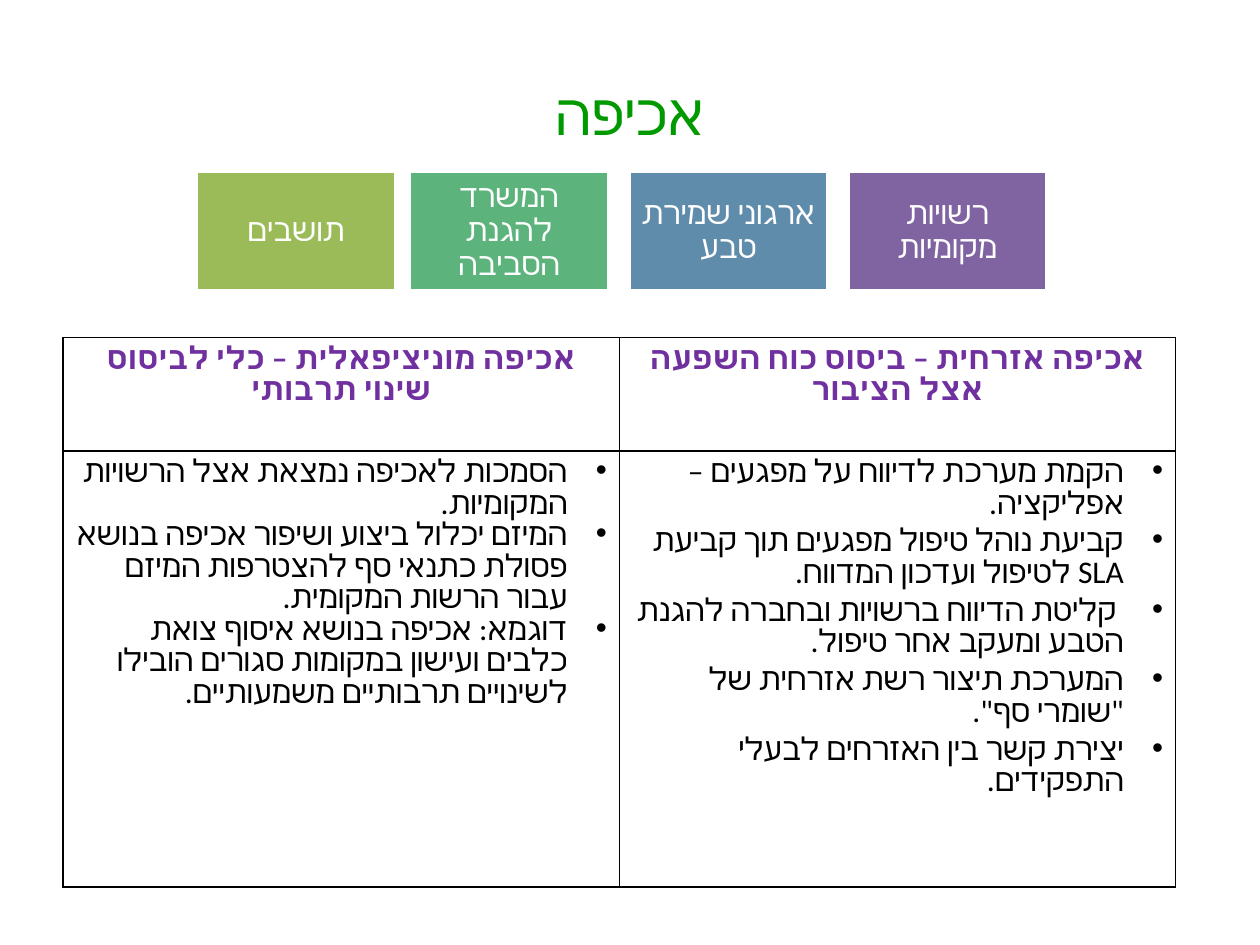
from lxml import etree
from pptx import Presentation
from pptx import util as u
from pptx.dml.color import RGBColor
from pptx.enum import shapes, text
from pptx.oxml import ns

FONT = "Calibri"
BODY_SIZE = 18
INDENT = u.Inches(0.31)
COLORS = {
    "title": "009900", "residents": "9BBB59", "ministry": "5CB37C",
    "nature": "608CAB", "councils": "8064A2", "heading": "7030A0",
    "ink": "000000", "paper": "FFFFFF",
}
PARTIES = [
    ("תושבים", "residents", 1.56),
    ("המשרד להגנת הסביבה", "ministry", 3.25),
    ("ארגוני שמירת טבע", "nature", 4.99),
    ("רשויות מקומיות", "councils", 6.73),
]
COLUMNS = [
    ("אכיפה מוניציפאלית – כלי לביסוס שינוי תרבותי", 0, [
        "הסמכות לאכיפה נמצאת אצל הרשויות המקומיות.",
        "המיזם יכלול ביצוע ושיפור אכיפה בנושא פסולת כתנאי סף להצטרפות המיזם עבור הרשות המקומית.",
        "דוגמא: אכיפה בנושא איסוף צואת כלבים ועישון במקומות סגורים הובילו לשינויים תרבותיים משמעותיים.",
    ]),
    ("אכיפה אזרחית – ביסוס כוח השפעה אצל הציבור", 3.6, [
        "הקמת מערכת לדיווח על מפגעים – אפליקציה.",
        "קביעת נוהל טיפול מפגעים תוך קביעת SLA לטיפול ועדכון המדווח.",
        " קליטת הדיווח ברשויות ובחברה להגנת הטבע ומעקב אחר טיפול.",
        "המערכת תיצור רשת אזרחית של \"שומרי סף\".",
        "יצירת קשר בין האזרחים לבעלי התפקידים.",
    ]),
]


def color(name):
    return RGBColor.from_string(COLORS[name])


def write_rtl(para, words, ink, size=BODY_SIZE, bold=False,
              align=text.PP_ALIGN.CENTER, spacing=None):
    """Fill a paragraph with right-to-left text, Hebrew font included."""
    para.text = words
    para.alignment = align
    para.line_spacing = spacing
    para._p.get_or_add_pPr().set("rtl", "1")
    for span in para.runs:
        span.font.name = FONT
        span.font.size = u.Pt(size)
        span.font.bold = bold
        span.font.color.rgb = color(ink)
        properties = span._r.get_or_add_rPr()
        etree.SubElement(properties, ns.qn("a:cs"), typeface=FONT)


def add_bullet(para):
    properties = para._p.get_or_add_pPr()
    properties.set("marL", str(INDENT))
    properties.set("indent", str(-INDENT))
    etree.SubElement(properties, ns.qn("a:buFont"), typeface="Arial")
    etree.SubElement(properties, ns.qn("a:buChar"), char="•")


def write_list(frame, items, gap):
    for index, item in enumerate(items):
        para = frame.add_paragraph() if index else frame.paragraphs[0]
        add_bullet(para)
        write_rtl(para, item, "ink", align=text.PP_ALIGN.RIGHT, spacing=0.82)
        if index:
            para.space_before = u.Pt(gap)


def frame_cell(cell):
    """Give a cell thin black borders and no fill."""
    properties = cell._tc.get_or_add_tcPr()
    for side in ("lnL", "lnR", "lnT", "lnB"):
        line = etree.SubElement(properties, ns.qn("a:" + side), w=str(u.Pt(1)))
        fill = etree.SubElement(line, ns.qn("a:solidFill"))
        etree.SubElement(fill, ns.qn("a:srgbClr"), val=COLORS["ink"])
    cell.fill.background()


def add_title(page, words):
    title = page.shapes.title
    title.left, title.top = u.Inches(0.5), u.Inches(0.27)
    title.width, title.height = u.Inches(9), u.Inches(1.25)
    title.text_frame.vertical_anchor = text.MSO_ANCHOR.MIDDLE
    write_rtl(title.text_frame.paragraphs[0], words, "title", size=33)


def add_party(page, words, fill, left):
    box = page.shapes.add_shape(
        shapes.MSO_SHAPE.RECTANGLE, u.Inches(left), u.Inches(1.36),
        u.Inches(1.58), u.Inches(0.95))
    box.shadow.inherit = False
    box.fill.solid()
    box.fill.fore_color.rgb = color(fill)
    box.line.color.rgb = color("paper")
    box.line.width = u.Pt(2)
    frame = box.text_frame
    frame.word_wrap = True
    frame.vertical_anchor = text.MSO_ANCHOR.MIDDLE
    frame.margin_left = frame.margin_right = u.Inches(0.07)
    frame.margin_top = frame.margin_bottom = u.Inches(0.07)
    write_rtl(frame.paragraphs[0], words, "paper", spacing=0.9)


def add_comparison(page):
    heights = (0.9, 3.46)
    table = page.shapes.add_table(
        2, len(COLUMNS), u.Inches(0.5), u.Inches(2.68),
        u.Inches(8.83), u.Inches(sum(heights))).table
    for row, height in zip(table.rows, heights):
        row.height = u.Inches(height)
    for column, (heading, gap, items) in enumerate(COLUMNS):
        head, body = table.cell(0, column), table.cell(1, column)
        frame_cell(head)
        frame_cell(body)
        write_rtl(head.text_frame.paragraphs[0], heading, "heading",
                  bold=True, spacing=0.82)
        write_list(body.text_frame, items, gap)


def main():
    deck = Presentation()
    deck.slide_width, deck.slide_height = u.Inches(10), u.Inches(7.5)
    page = deck.slides.add_slide(deck.slide_layouts.get_by_name("Title Only"))
    add_title(page, "אכיפה")
    for words, fill, left in PARTIES:
        add_party(page, words, fill, left)
    add_comparison(page)
    deck.save("out.pptx")


if __name__ == "__main__":
    main()
